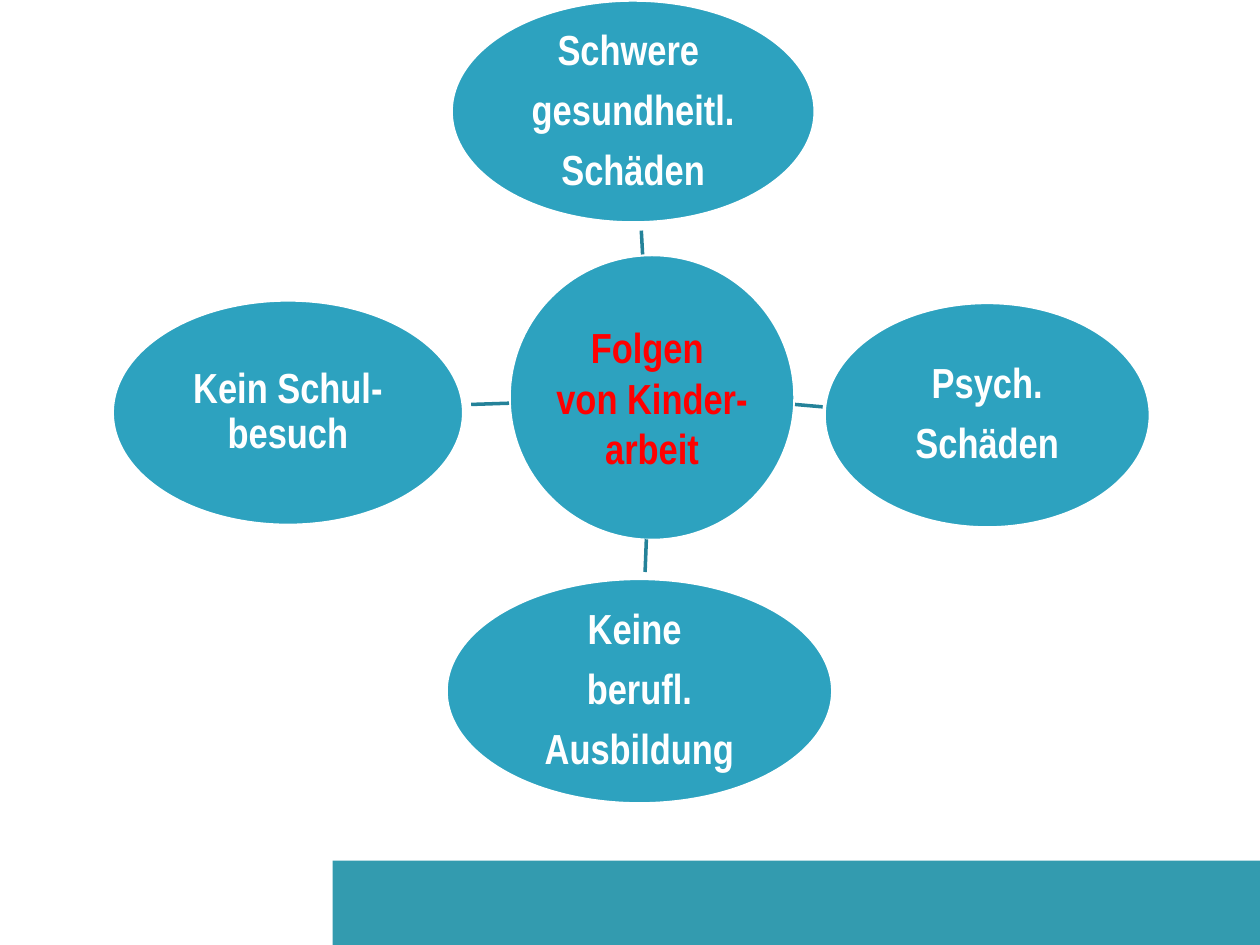
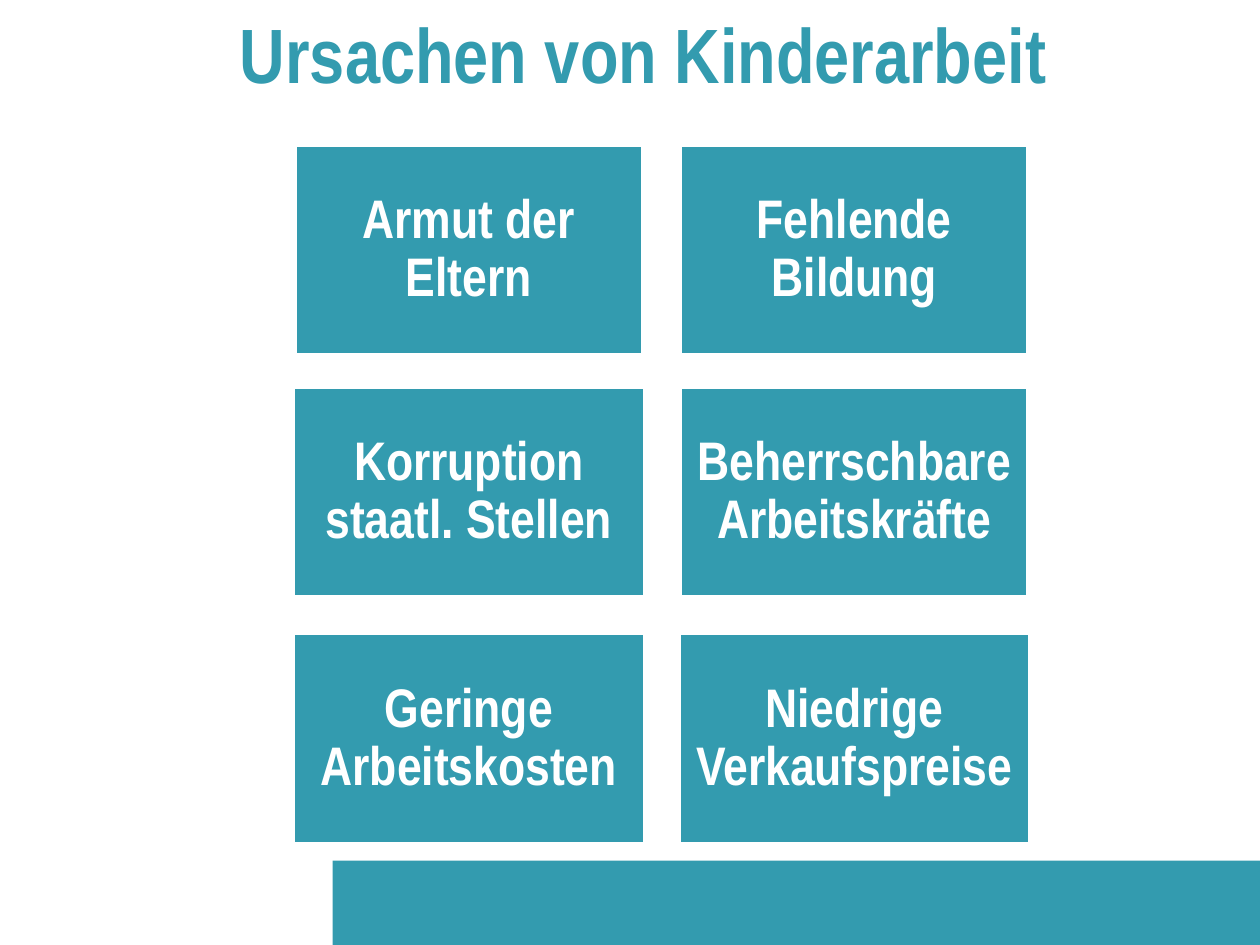
from lxml import etree
from pptx import Presentation
from pptx import util as u
from pptx.dml.color import RGBColor
from pptx.enum import shapes, text
from pptx.oxml import ns

FONT = "Arial Narrow"
TEAL = RGBColor(0x33, 0x9B, 0xAF)
BLUE = RGBColor(0x2D, 0xA2, 0xBF)
SPOKE_BLUE = RGBColor(0x24, 0x82, 0x99)
WHITE = RGBColor(0xFF, 0xFF, 0xFF)
RED = RGBColor(0xFF, 0x00, 0x00)

SLIDE_WIDTH, SLIDE_HEIGHT = 10, 7.5
BAND_LEFT, BAND_TOP = 2.64, 6.83
SPACE_SHARE = 0.35  # paragraph gap as a share of the text size

HUB = (["Folgen ", "von Kinder-arbeit"], (4.04, 2.02, 2.27, 2.27))
# lines, place of the ellipse, spoke from hub to ellipse, gap share
CONSEQUENCES = [
    (["Schwere ", "gesundheitl.", "Schäden"], (3.58, 0, 2.89, 1.77),
     (5.1, 2.02, 5.09, 1.83), SPACE_SHARE),
    (["Psych.", "Schäden"], (6.54, 2.4, 2.59, 1.79),
     (6.31, 3.21, 6.54, 3.23), SPACE_SHARE),
    (["Keine ", "berufl.", "Ausbildung"], (3.54, 4.59, 3.07, 1.79),
     (5.13, 4.28, 5.12, 4.54), SPACE_SHARE),
    (["Kein Schul-", "besuch"], (0.89, 2.38, 2.79, 1.79),
     (4.04, 3.2, 3.74, 3.21), 0),
]

CAUSES_TITLE = "Ursachen von Kinderarbeit"
# each row: (text, box width) per column
CAUSES = [
    [("Armut der Eltern", 2.76), ("Fehlende Bildung", 2.76)],
    [("Korruption staatl. Stellen", 2.79), ("Beherrschbare Arbeitskräfte", 2.76)],
    [("Geringe Arbeitskosten", 2.79), ("Niedrige Verkaufspreise", 2.78)],
]
COLUMN_CENTRES = (3.72, 6.78)
ROW_TOPS = (1.15, 3.07, 5.03)
CAUSE_HEIGHT = 1.67


def inches(*lengths):
    return [u.Inches(length) for length in lengths]


def write(shape, lines, size, color, inset, line_spacing=1.0, gap=0):
    frame = shape.text_frame
    frame.word_wrap = True
    frame.vertical_anchor = text.MSO_ANCHOR.MIDDLE
    frame.margin_left = frame.margin_right = u.Inches(inset)
    frame.margin_top = frame.margin_bottom = u.Inches(inset)
    frame.text = "\n".join(lines)
    for paragraph in frame.paragraphs:
        paragraph.alignment = text.PP_ALIGN.CENTER
        paragraph.line_spacing = line_spacing
        paragraph.space_before = u.Pt(0)
        paragraph.space_after = u.Pt(size * gap)
        for run in paragraph.runs:
            run.font.name = FONT
            run.font.size = u.Pt(size)
            run.font.bold = True
            run.font.color.rgb = color


def add_filled(slide, kind, place, fill, outlined=True):
    shape = slide.shapes.add_shape(kind, *inches(*place))
    shape.shadow.inherit = False
    shape.fill.solid()
    shape.fill.fore_color.rgb = fill
    if outlined:
        shape.line.color.rgb = WHITE
        shape.line.width = u.Pt(2)
    else:
        shape.line.fill.background()
    return shape


def add_spoke(slide, ends):
    spoke = slide.shapes.add_connector(shapes.MSO_CONNECTOR.STRAIGHT, *inches(*ends))
    spoke.line.color.rgb = SPOKE_BLUE
    spoke.line.width = u.Pt(2)
    etree.SubElement(spoke.element.spPr, ns.qn("a:effectLst"))


def add_band_to_master(presentation, slide):
    """Draw the band on a slide, then move it behind everything on the master."""
    place = (BAND_LEFT, BAND_TOP, SLIDE_WIDTH - BAND_LEFT, SLIDE_HEIGHT - BAND_TOP)
    band = add_filled(slide, shapes.MSO_SHAPE.RECTANGLE, place, TEAL, outlined=False)
    presentation.slide_master.shapes._spTree.insert(2, band.element)


def build_consequences(slide):
    lines, place = HUB
    hub = add_filled(slide, shapes.MSO_SHAPE.OVAL, place, BLUE)
    write(hub, lines, 24, RED, 0.02)
    for lines, place, spoke_ends, gap in CONSEQUENCES:
        add_spoke(slide, spoke_ends)
        ellipse = add_filled(slide, shapes.MSO_SHAPE.OVAL, place, BLUE)
        write(ellipse, lines, 24, WHITE, 0.02, 0.9, gap)


def build_causes(slide):
    title = slide.shapes.title
    title.left, title.top, title.width, title.height = inches(0.86, 0, 8.5, 0.84)
    write(title, [CAUSES_TITLE], 44, TEAL, 0.05)
    for top, row in zip(ROW_TOPS, CAUSES):
        for centre, (cause, width) in zip(COLUMN_CENTRES, row):
            place = (centre - width / 2, top, width, CAUSE_HEIGHT)
            box = add_filled(slide, shapes.MSO_SHAPE.RECTANGLE, place, TEAL)
            write(box, [cause], 31, WHITE, 0.13, 0.9, SPACE_SHARE)


def main():
    presentation = Presentation()
    presentation.slide_width, presentation.slide_height = inches(SLIDE_WIDTH, SLIDE_HEIGHT)
    title_only, blank = presentation.slide_layouts[5], presentation.slide_layouts[6]
    consequences = presentation.slides.add_slide(blank)
    add_band_to_master(presentation, consequences)
    build_consequences(consequences)
    build_causes(presentation.slides.add_slide(title_only))
    presentation.save("out.pptx")


if __name__ == "__main__":
    main()
